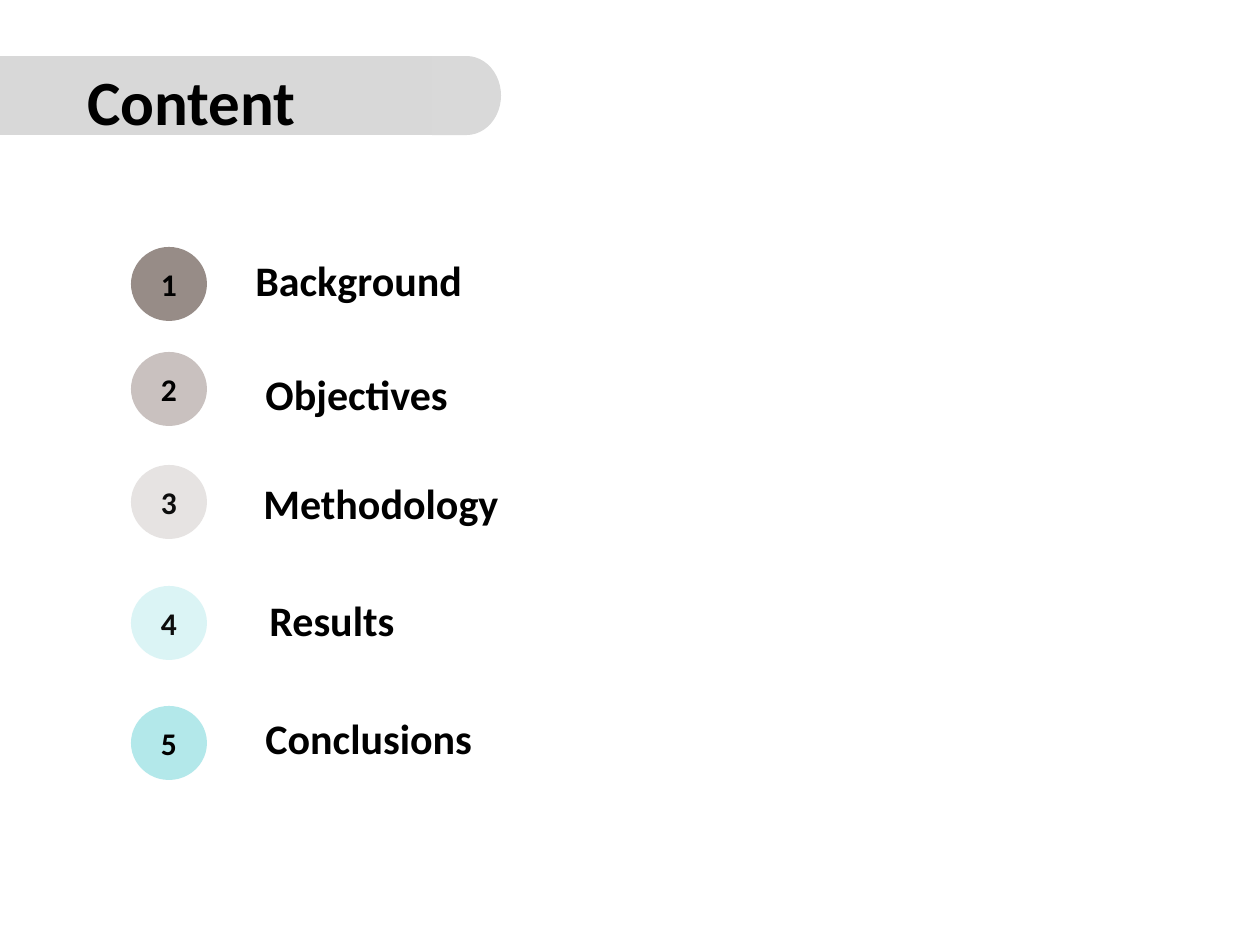
from pptx import Presentation
from pptx import util as u
from pptx.dml.color import RGBColor
from pptx.enum import shapes, text
from pptx.oxml.ns import qn
from lxml import etree

PX = 7257.14  # EMU per px, 126 px to the inch
FONT = "Calibri"
SHAPE = shapes.MSO_SHAPE

TITLE = "Content"
# label, circle top, circle colour, opacity %, number colour, label left, top, width
ITEMS = [
    ("Background", 247, "978C87", 100, "000000", 243, 248, 234),
    ("Objectives", 352, "C9C1BF", 100, "000000", 253, 362, 210),
    ("Methodology", 465, "E6E3E2", 100, "0D0D0D", 251, 471, 263),
    ("Results", 586, "C6EEF0", 62, "0D0D0D", 257, 588, 152),
    ("Conclusions", 706, "88DBDF", 63, "000000", 253, 706, 234),
]
CIRCLE_LEFT, CIRCLE_WIDTH, CIRCLE_HEIGHT = 131, 76, 74
LABEL_HEIGHT = 63
BANNER_TOP, BANNER_WIDTH, BANNER_HEIGHT, CAP_WIDTH = 56, 432, 79, 69


def px(value):
    return u.Emu(round(value * PX))


def rgb(value):
    return RGBColor.from_string(value)


def add_filled(slide, kind, left, top, width, height, color, opacity=100):
    shape = slide.shapes.add_shape(kind, px(left), px(top), px(width), px(height))
    shape.shadow.inherit = False
    shape.fill.solid()
    shape.fill.fore_color.rgb = rgb(color)
    shape.line.fill.background()
    if opacity < 100:
        color_element = shape.fill._xPr.find(qn("a:solidFill"))[0]
        etree.SubElement(color_element, qn("a:alpha"), val=str(opacity * 1000))
    return shape


def write(shape, words, size, color="000000", align=text.PP_ALIGN.LEFT,
          anchor=text.MSO_ANCHOR.TOP):
    frame = shape.text_frame
    frame.word_wrap = True
    frame.vertical_anchor = anchor
    paragraph = frame.paragraphs[0]
    paragraph.alignment = align
    run = paragraph.add_run()
    run.text = words
    run.font.name = FONT
    run.font.size = u.Pt(size)
    run.font.bold = True
    run.font.color.rgb = rgb(color)


presentation = Presentation()
presentation.slide_width, presentation.slide_height = px(1260), px(945)
slide = presentation.slides.add_slide(presentation.slide_layouts[6])

# Title banner with a rounded end
banner = add_filled(slide, SHAPE.RECTANGLE, 0, BANNER_TOP, BANNER_WIDTH,
                    BANNER_HEIGHT, "808080", 30)
write(banner, TITLE, 36)
banner.text_frame.margin_left = px(87)
banner.text_frame.margin_top = px(6)
banner.text_frame.margin_bottom = 0
add_filled(slide, SHAPE.FLOWCHART_DELAY, BANNER_WIDTH, BANNER_TOP, CAP_WIDTH,
           BANNER_HEIGHT, "D9D9D9")

# Numbered circles and their labels
for number, item in enumerate(ITEMS, 1):
    label, circle_top, fill, opacity, number_color, left, top, width = item
    circle = add_filled(slide, SHAPE.OVAL, CIRCLE_LEFT, circle_top,
                        CIRCLE_WIDTH, CIRCLE_HEIGHT, fill, opacity)
    write(circle, str(number), 18, number_color, text.PP_ALIGN.CENTER,
          text.MSO_ANCHOR.MIDDLE)
    box = slide.shapes.add_textbox(px(left), px(top), px(width), px(LABEL_HEIGHT))
    write(box, label, 24)

presentation.save("out.pptx")
